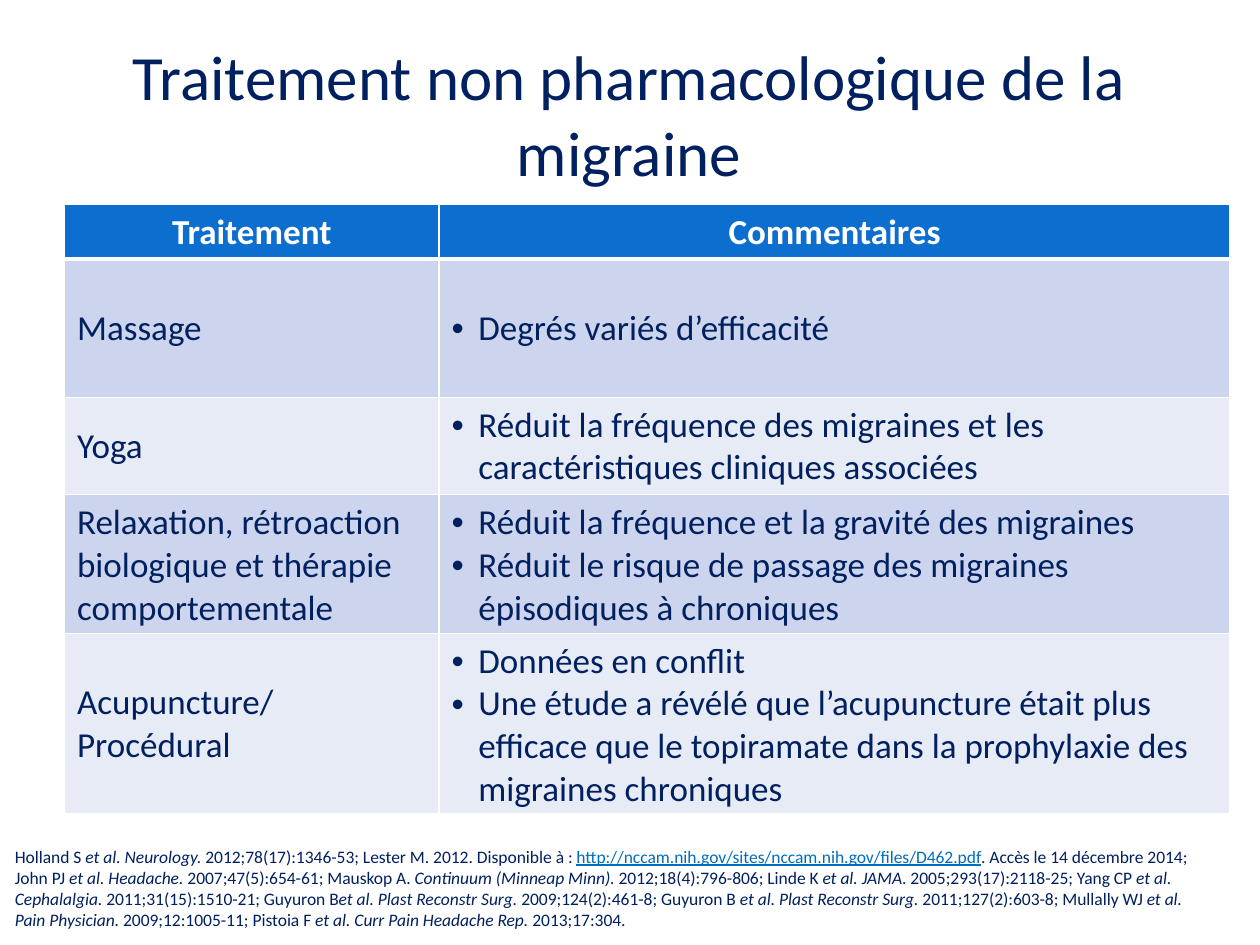
import pptx
import pptx.util
import pptx.dml.color
import pptx.enum.text
import pptx.oxml.ns
from lxml import etree

Cm, Pt = pptx.util.Cm, pptx.util.Pt
RGBColor = pptx.dml.color.RGBColor
PP_ALIGN = pptx.enum.text.PP_ALIGN
MIDDLE = pptx.enum.text.MSO_ANCHOR.MIDDLE
qn = pptx.oxml.ns.qn

NAVY = RGBColor(0x00, 0x20, 0x60)
WHITE = RGBColor(0xFF, 0xFF, 0xFF)
HEADER_BLUE = RGBColor(0x0C, 0x6F, 0xCF)
BANDS = [RGBColor(0xCC, 0xD5, 0xED), RGBColor(0xE7, 0xEB, 0xF6)]
LINK_BLUE = RGBColor(0x00, 0x6D, 0xBF)
FONT = "Calibri"

# Content
TITLE = "Traitement non pharmacologique de la migraine"
HEADERS = ["Traitement", "Commentaires"]
TREATMENTS = [
    ("Massage", ["Degrés variés d’efficacité"]),
    ("Yoga", ["Réduit la fréquence des migraines et les caractéristiques cliniques associées"]),
    ("Relaxation, rétroaction biologique et thérapie comportementale",
     ["Réduit la fréquence et la gravité des migraines",
      "Réduit le risque de passage des migraines épisodiques à chroniques"]),
    ("Acupuncture/\vProcédural",
     ["Données en conflit",
      "Une étude a révélé que l’acupuncture était plus efficace que le topiramate "
      "dans la prophylaxie des migraines chroniques"]),
]
PLAIN, ITALIC, LINK = "plain", "italic", "link"
REFERENCES = [
    ("Holland S ", PLAIN), ("et al. Neurology. ", ITALIC),
    ("2012;78(17):1346-53; Lester M. 2012. Disponible à : ", PLAIN),
    ("http://nccam.nih.gov/sites/nccam.nih.gov/files/D462.pdf", LINK),
    (". Accès le 14 décembre 2014; John PJ ", PLAIN), ("et al. Headache. ", ITALIC),
    ("2007;47(5):654-61; Mauskop A. ", PLAIN), ("Continuum (Minneap Minn). ", ITALIC),
    ("2012;18(4):796-806; Linde K ", PLAIN), ("et al. JAMA", ITALIC),
    (". 2005;293(17):2118-25; Yang CP ", PLAIN), ("et al. Cephalalgia. ", ITALIC),
    ("2011;31(15):1510-21; Guyuron B", PLAIN), ("et al. Plast Reconstr Surg. ", ITALIC),
    ("2009;124(2):461-8; Guyuron B ", PLAIN), ("et al. Plast Reconstr Surg.", ITALIC),
    (" 2011;127(2):603-8; Mullally WJ ", PLAIN), ("et al. Pain Physician. ", ITALIC),
    ("2009;12:1005-11; Pistoia F ", PLAIN), ("et al. Curr Pain Headache Rep. ", ITALIC),
    ("2013;17:304.", PLAIN),
]
COLUMN_WIDTHS = [7.55, 15.95]
ROW_HEIGHTS = [1.1, 2.79, 1.96, 2.79, 2.79]
BULLET_INDENT = Cm(0.54)


def style(run, size, color=NAVY, bold=False):
    run.font.name, run.font.size, run.font.bold = FONT, Pt(size), bold
    run.font.color.rgb = color


def add_text_frame(slide, left, top, width, height):
    frame = slide.shapes.add_textbox(Cm(left), Cm(top), Cm(width), Cm(height)).text_frame
    frame.word_wrap = True
    return frame


def add_bullet(paragraph):
    properties = paragraph._p.get_or_add_pPr()
    properties.set("marL", str(BULLET_INDENT))
    properties.set("indent", str(-BULLET_INDENT))
    etree.SubElement(properties, qn("a:buFont")).set("typeface", "Arial")
    etree.SubElement(properties, qn("a:buChar")).set("char", "•")


def add_borders(cell, header_below, header):
    widths = {"a:lnL": 1, "a:lnR": 1, "a:lnT": 3 if header_below else 1, "a:lnB": 3 if header else 1}
    for tag, width in widths.items():
        line = etree.SubElement(cell._tc.get_or_add_tcPr(), qn(tag))
        line.set("w", str(Pt(width)))
        fill = etree.SubElement(line, qn("a:solidFill"))
        etree.SubElement(fill, qn("a:srgbClr")).set("val", str(WHITE))


def fill_cell(cell, lines, row, bulleted):
    header = row == 0
    add_borders(cell, row == 1, header)
    cell.fill.solid()
    cell.fill.fore_color.rgb = HEADER_BLUE if header else BANDS[(row - 1) % 2]
    cell.vertical_anchor = MIDDLE
    cell.text_frame.text = "\n".join(lines)
    for paragraph in cell.text_frame.paragraphs:
        if header:
            paragraph.alignment = PP_ALIGN.CENTER
        if bulleted:
            add_bullet(paragraph)
        for run in paragraph.runs:
            style(run, 20, WHITE if header else NAVY, header)


def main():
    deck = pptx.Presentation()
    deck.slide_width, deck.slide_height = Cm(25.4), Cm(19.05)
    slide = deck.slides.add_slide(deck.slide_layouts[6])

    # Title
    title = add_text_frame(slide, 1.25, 0.7, 22.86, 3.18)
    title.vertical_anchor = MIDDLE
    title.text = TITLE
    title.paragraphs[0].alignment = PP_ALIGN.CENTER
    style(title.paragraphs[0].runs[0], 36)

    # Treatment table
    table = slide.shapes.add_table(
        len(ROW_HEIGHTS), len(COLUMN_WIDTHS), Cm(1.3), Cm(4.12),
        Cm(sum(COLUMN_WIDTHS)), Cm(sum(ROW_HEIGHTS))).table
    for column, width in zip(table.columns, COLUMN_WIDTHS):
        column.width = Cm(width)
    for table_row, height in zip(table.rows, ROW_HEIGHTS):
        table_row.height = Cm(height)
    for column, heading in enumerate(HEADERS):
        fill_cell(table.cell(0, column), [heading], 0, False)
    for row, (treatment, comments) in enumerate(TREATMENTS, start=1):
        fill_cell(table.cell(row, 0), [treatment], row, False)
        fill_cell(table.cell(row, 1), comments, row, True)

    # References
    references = add_text_frame(slide, 0.05, 16.92, 24.64, 1.96).paragraphs[0]
    for text, kind in REFERENCES:
        run = references.add_run()
        run.text = text
        style(run, 10, LINK_BLUE if kind == LINK else NAVY)
        run.font.italic = kind == ITALIC
        run.font.underline = kind == LINK

    deck.save("out.pptx")


if __name__ == "__main__":
    main()
